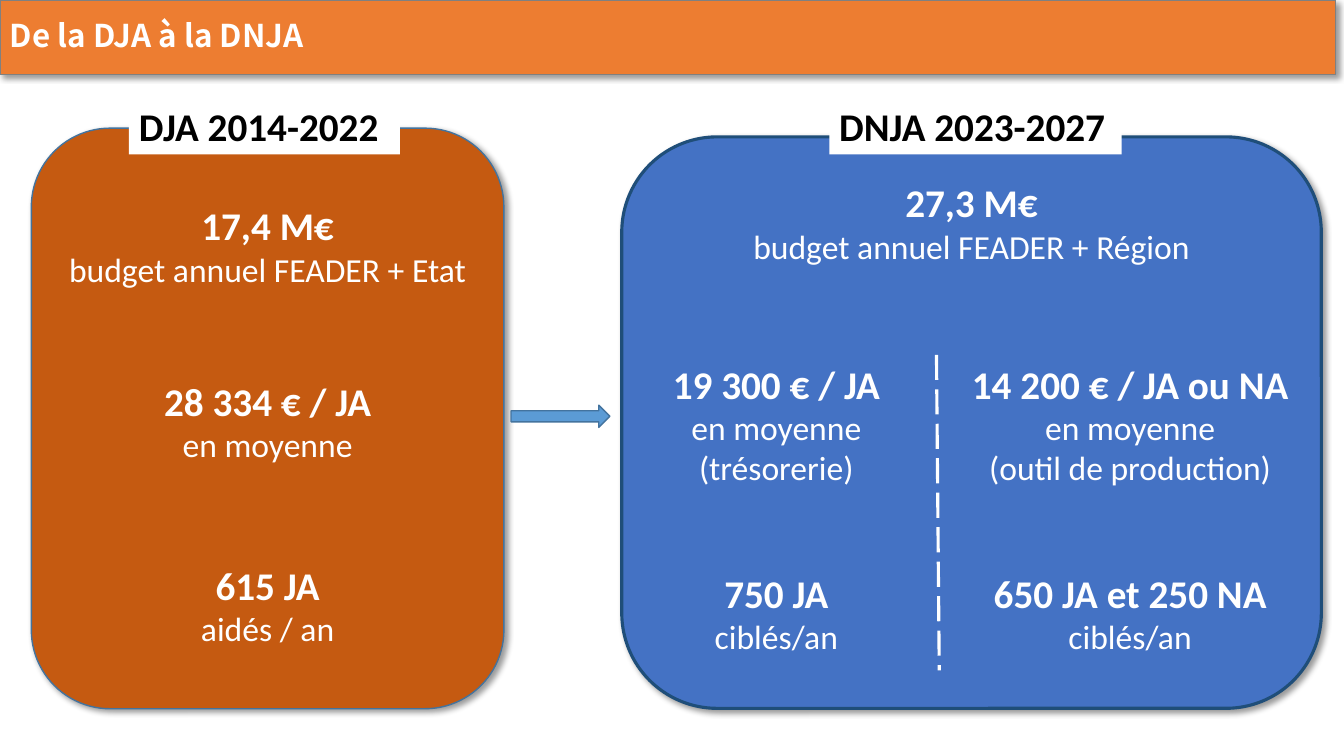
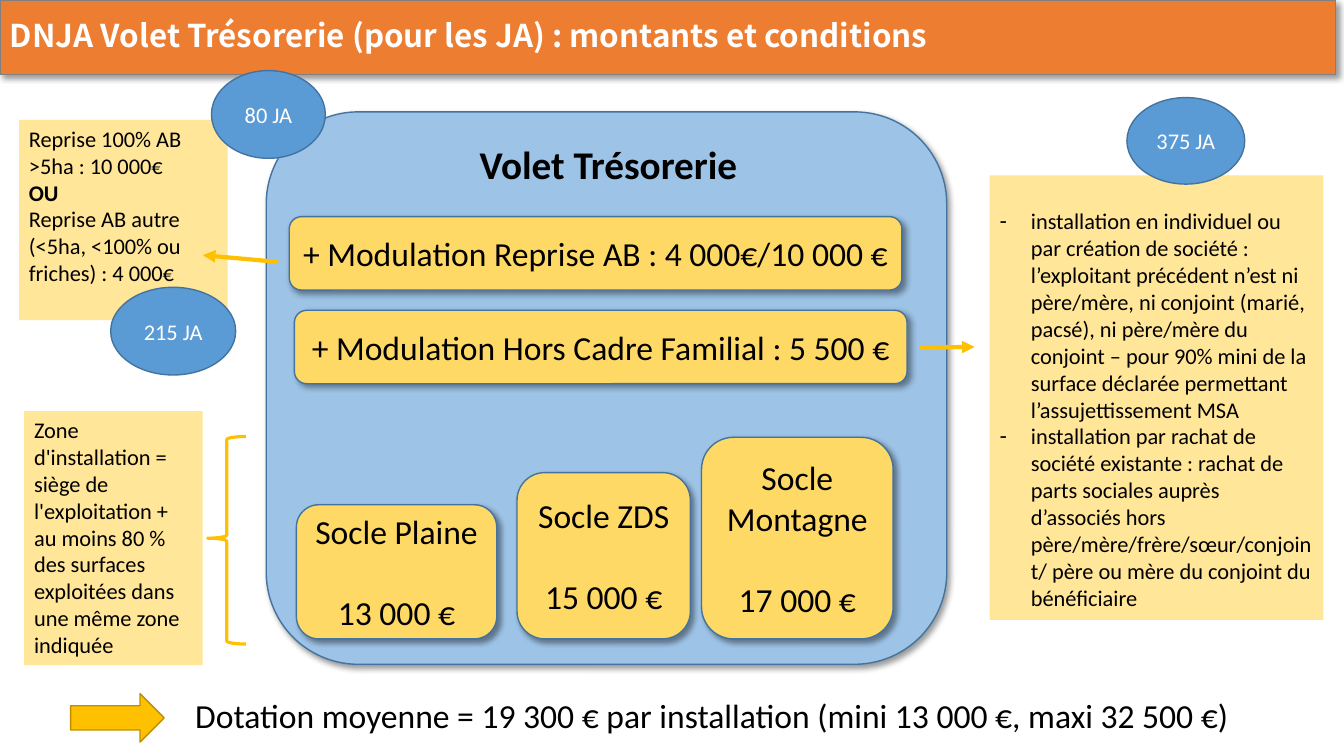
from lxml.etree import SubElement
from pptx import Presentation
from pptx.dml.color import RGBColor
from pptx.enum.dml import MSO_LINE
from pptx.enum.shapes import MSO_CONNECTOR, MSO_SHAPE
from pptx.enum.text import MSO_ANCHOR, MSO_AUTO_SIZE, PP_ALIGN
from pptx.oxml.ns import qn
from pptx.util import Cm, Pt

COLOURS = {
    "header": "ED7D31", "header_line": "808080", "rust": "C55A11", "royal": "4472C4",
    "navy": "1F4E79", "outline": "43739E", "blue": "5B9BD5", "sky": "9DC3E6",
    "gold": "FFD966", "cream": "FFE699", "amber": "FFC000", "bronze": "BD8E00",
    "white": "FFFFFF", "black": "000000",
}
HEADER_PLACE = (0, 0, 33.65, 1.88)
BASE_FLOOR = 16.1
SIDE_INSET = 0.25
WHITE = {"colour": "white"}
CENTRED = {"align": PP_ALIGN.CENTER}
MIDDLE = {"anchor": MSO_ANCHOR.MIDDLE, "inset": 0.1}


def colour(name):
    """Return the named colour."""
    return RGBColor.from_string(COLOURS[name])


def apply(target, formats):
    """Set each attribute of target from a dict of format values."""
    for name, value in formats.items():
        setattr(target, name, value)


def place_at(shape, place):
    """Move and size a shape, in centimetres."""
    apply(shape, dict(zip(("left", "top", "width", "height"), map(Cm, place))))


def paint(shape, fill=None, line=None, weight=1, shadow=False):
    """Set fill, outline and drop shadow."""
    shape.shadow.inherit = False
    if fill:
        shape.fill.solid()
        shape.fill.fore_color.rgb = colour(fill)
    else:
        shape.fill.background()
    if line:
        shape.line.color.rgb = colour(line)
        shape.line.width = Pt(weight)
    else:
        shape.line.fill.background()
    if shadow:
        effects = shape._element.spPr.find(qn("a:effectLst"))
        outer = SubElement(effects, qn("a:outerShdw"), blurRad=str(Pt(4)),
                           dist=str(Pt(3)), dir="2700000", algn="tl", rotWithShape="0")
        tint = SubElement(outer, qn("a:srgbClr"), val=COLOURS["black"])
        SubElement(tint, qn("a:alpha"), val="40000")


def write(box, lines, size=24, colour_name="black", font="Calibri", align=PP_ALIGN.LEFT,
          anchor=MSO_ANCHOR.TOP, inset=SIDE_INSET, top=0.13, spacing=1.0):
    """Write lines, each a text or a (text, looks) pair, into a shape."""
    frame = box.text_frame
    apply(frame, {"word_wrap": True, "auto_size": MSO_AUTO_SIZE.NONE,
                  "vertical_anchor": anchor, "margin_left": Cm(inset),
                  "margin_right": Cm(inset), "margin_top": Cm(top),
                  "margin_bottom": Cm(0.13)})
    for index, line in enumerate(lines):
        text, looks = (line, {}) if isinstance(line, str) else line
        para = frame.paragraphs[0] if index == 0 else frame.add_paragraph()
        apply(para, {"alignment": align, "line_spacing": spacing,
                     "space_before": Pt(looks.get("before", 0)), "space_after": Pt(0)})
        span = para.add_run()
        span.text = text
        apply(span.font, {"name": font, "size": Pt(looks.get("size", size)),
                          "bold": looks.get("bold", False)})
        span.font.color.rgb = colour(colour_name)


def add_page(deck, layout_index, title):
    """Add a slide with the shared title band."""
    page = deck.slides.add_slide(deck.slide_layouts[layout_index])
    band = page.shapes.title
    place_at(band, HEADER_PLACE)
    paint(band, "header", "header_line", 0.75, True)
    write(band, [(title, {"bold": True})], 22.4, "white", "Noto Sans CJK JP",
          anchor=MSO_ANCHOR.MIDDLE, spacing=0.9)
    return page


def add_block(page, kind, place, fill=None, line="outline", weight=1, shadow=False):
    """Add a preset shape."""
    block = page.shapes.add_shape(kind, *map(Cm, place))
    paint(block, fill, line, weight, shadow)
    return block


def add_panel(page, place, fill, line="outline", weight=1):
    """Add a shadowed rounded rectangle."""
    return add_block(page, MSO_SHAPE.ROUNDED_RECTANGLE, place, fill, line, weight, True)


def add_text(page, place, lines, fill=None, **looks):
    """Add a text box, filled on request."""
    box = page.shapes.add_textbox(*map(Cm, place))
    paint(box, fill)
    write(box, lines, **looks)


def add_line(page, start, end, name, weight, dash=None, arrow=False):
    """Add a straight line with optional dashes and arrowhead."""
    connector = page.shapes.add_connector(MSO_CONNECTOR.STRAIGHT, *map(Cm, start + end))
    apply(connector.line, {"width": Pt(weight), "dash_style": dash})
    connector.line.color.rgb = colour(name)
    if arrow:
        SubElement(connector.line._get_or_add_ln(), qn("a:tailEnd"), type="triangle")
    SubElement(connector._element.spPr, qn("a:effectLst"))


def add_gold_bar(page, place, lines):
    """Add a gold rounded box with centred text."""
    write(add_panel(page, place, "gold"), lines, **CENTRED, **MIDDLE)


def add_bubble(page, place, text):
    """Add a blue ellipse holding a count."""
    bubble = add_block(page, MSO_SHAPE.OVAL, place, "blue")
    write(bubble, [text], 16, "white", **CENTRED, **MIDDLE)


def add_conditions(page, place, items):
    """Fill the body placeholder with a dashed list."""
    body = page.placeholders[1]
    place_at(body, place)
    paint(body, "cream")
    write(body, items, 16, top=0.81)
    for para in body.text_frame.paragraphs:
        properties = para._p.get_or_add_pPr()
        properties.set("marL", str(Cm(0.79)))
        properties.set("indent", str(Cm(-0.79)))
        SubElement(properties, qn("a:buChar"), char="-")


def figure(amount, *captions, before=0):
    """Return the lines of a bold amount and its captions."""
    return [(amount, {"size": 28, "bold": True, "before": before}), *captions]


def build_comparison(deck):
    """Build the slide comparing both schemes."""
    page = add_page(deck, 5, "De la DJA à la DNJA")
    panel_text = {"colour_name": "white", "inset": 0.1, **CENTRED}
    former = add_panel(page, (0.79, 3.23, 11.91, 14.63), "rust")
    write(former, figure("17,4 M€", "budget annuel FEADER + Etat")
          + figure("28 334 € / JA", "en moyenne", before=63)
          + figure("615 JA", "aidés / an", before=69), top=1.27, **panel_text)
    current = add_panel(page, (15.67, 3.45, 17.63, 14.4), "royal", "navy", 2.25)
    write(current, figure("27,3 M€", "budget annuel FEADER + Région"),
          top=0.35, **panel_text)
    add_block(page, MSO_SHAPE.RIGHT_ARROW, (12.88, 10.21, 2.49, 0.56), "blue")
    columns = [
        (15.54, 8.05, figure("19 300 € / JA", "en moyenne", "(trésorerie)")
         + figure("750 JA", "ciblés/an", before=58)),
        (24.16, 8.64, figure("14 200 € / JA ou NA", "en moyenne", "(outil de production)")
         + figure("650 JA et 250 NA", "ciblés/an", before=58)),
    ]
    for left, width, lines in columns:
        add_text(page, (left, 8.94, width, 8.3), lines, **panel_text)
    for left, width, label in ((3.25, 6.83, "DJA 2014-2022"), (20.9, 7.37, "DNJA 2023-2027")):
        add_text(page, (left, 2.44, width, 1.45), figure(label), "white")
    add_line(page, (23.6, 8.94), (23.67, 16.89), "white", 2.25, MSO_LINE.LONG_DASH)


def build_amounts(deck):
    """Build the slide on amounts and conditions."""
    page = add_page(deck, 1, "DNJA Volet Trésorerie (pour les JA) : montants et conditions")
    add_conditions(page, (24.94, 4.42, 8.41, 11.2), [
        "installation en individuel ou par création de société : l’exploitant précédent "
        "n’est ni père/mère, ni conjoint (marié, pacsé), ni père/mère du conjoint – pour "
        "90% mini de la surface déclarée permettant l’assujettissement MSA",
        "installation par rachat de société existante : rachat de parts sociales auprès "
        "d’associés hors père/mère/frère/sœur/conjoint/ père ou mère du conjoint du "
        "bénéficiaire",
    ])
    add_panel(page, (6.71, 2.82, 17.15, 13.92), "sky")
    add_text(page, (9.53, 3.4, 11.61, 1.45), figure("Volet Trésorerie"), **CENTRED)
    bars = [(7.42, 7.82, "+ Modulation Hors Cadre Familial : 5 500 €"),
            (7.29, 5.46, "+ Modulation Reprise AB : 4 000€/10 000 €")]
    for left, top, text in bars:
        add_gold_bar(page, (left, top, 15.44, 1.85), [text])
    bases = [(7.47, 5.05, 3.38, "Socle Plaine", "13 000 €"),
             (13.03, 4.37, 4.19, "Socle ZDS", "15 000 €"),
             (17.68, 4.83, 5.08, "Socle Montagne", "17 000 €")]
    for left, width, height, name, amount in bases:
        add_gold_bar(page, (left, BASE_FLOOR - height, width, height),
                     [name, (amount, {"before": 29})])
    add_block(page, MSO_SHAPE.RIGHT_ARROW, (1.78, 17.48, 2.36, 1.22), "amber", "bronze")
    add_text(page, (4.67, 17.37, 26.7, 1.27),
             ["Dotation moyenne = 19 300 € par installation (mini 13 000 €, maxi 32 500 €)"])
    add_text(page, (0.48, 3.02, 5.26, 5.05),
             ["Reprise 100% AB >5ha : 10 000€", ("OU", {"bold": True}),
              "Reprise AB autre (<5ha, <100% ou friches) : 4 000€"], "cream", size=16)
    add_text(page, (0.61, 10.36, 4.5, 6.4),
             ["Zone d'installation = siège de l'exploitation + au moins 80 % des surfaces "
              "exploitées dans une même zone indiquée"], "cream", size=16)
    for start, end in (((7.01, 6.6), (5.11, 6.43)), ((23.19, 8.76), (24.56, 8.74))):
        add_line(page, start, end, "amber", 3, arrow=True)
    bubbles = [((28.4, 2.46, 2.97, 2.18), "375 JA"), ((5.33, 1.78, 2.87, 2.21), "80 JA"),
               ((2.79, 7.24, 3.15, 2.21), "215 JA")]
    for place, text in bubbles:
        add_bubble(page, place, text)
    brace = add_block(page, MSO_SHAPE.LEFT_BRACE, (5.23, 11, 0.97, 5.23), None, "amber", 2.25)
    brace.adjustments[0], brace.adjustments[1] = 0.08, 0.49


def main():
    """Build and save the deck."""
    deck = Presentation()
    apply(deck, {"slide_width": Cm(33.87), "slide_height": Cm(19.05)})
    build_comparison(deck)
    build_amounts(deck)
    deck.save("out.pptx")


if __name__ == "__main__":
    main()
